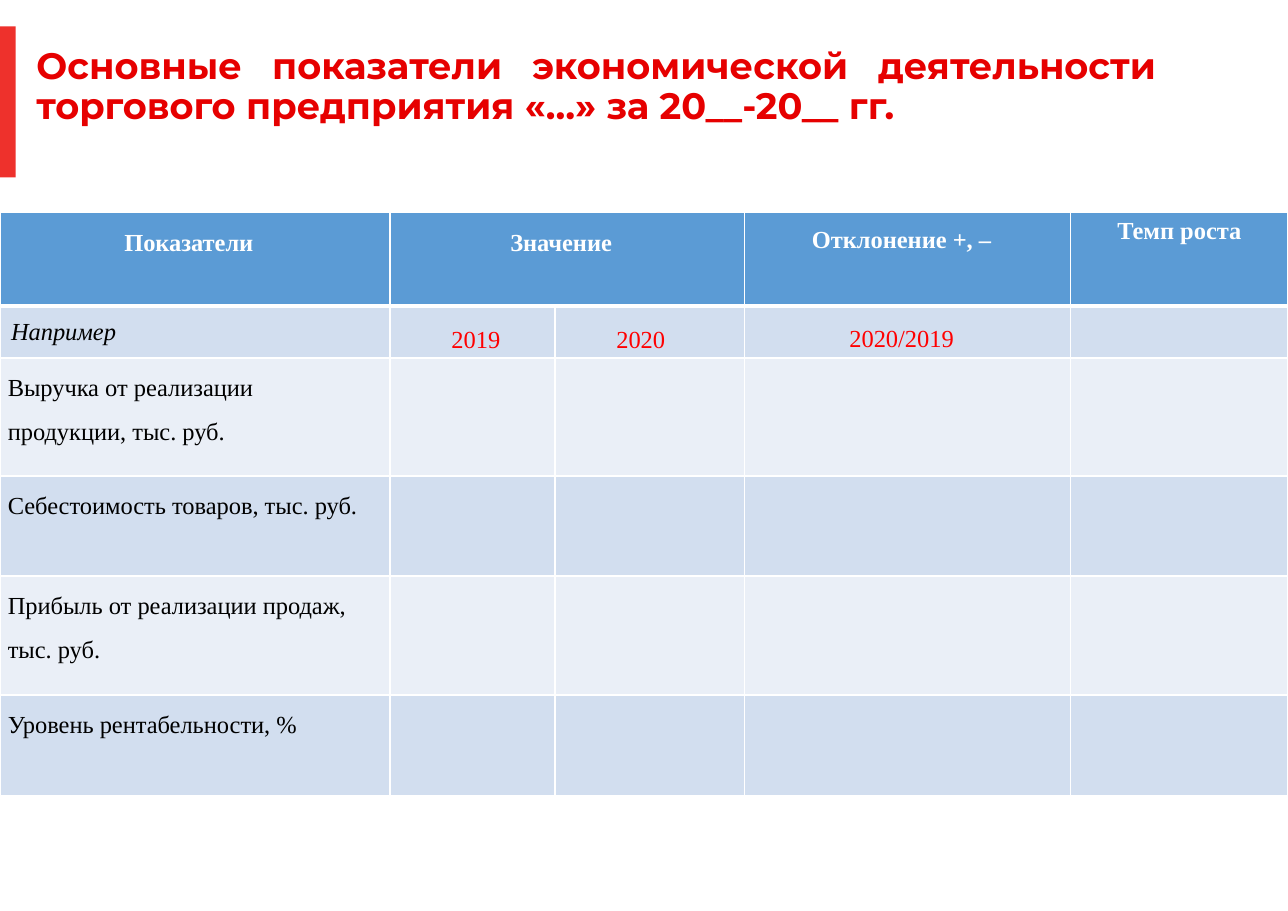
"""Builds a slide with a table of the main economic figures of a trading firm."""
from dataclasses import dataclass

from lxml import etree
from pptx import Presentation
from pptx.dml.color import RGBColor
from pptx.enum.shapes import MSO_SHAPE
from pptx.enum.text import MSO_ANCHOR, PP_ALIGN
from pptx.oxml.ns import qn
from pptx.util import Cm, Pt

RECT = MSO_SHAPE.RECTANGLE
TOP, MIDDLE = MSO_ANCHOR.TOP, MSO_ANCHOR.MIDDLE
LEFT, CENTER, JUSTIFY = PP_ALIGN.LEFT, PP_ALIGN.CENTER, PP_ALIGN.JUSTIFY

TITLE = ("Основные показатели экономической деятельности "
         "торгового предприятия «…» за 20__-20__ гг.")
ROWS = [
    ("Показатели", "Значение", "", "Отклонение +, –", "Темп роста"),
    ("Например", "2019", "2020 ", "2020/2019", ""),
    ("Выручка от реализации продукции, тыс. руб.", "", "", "", ""),
    ("Себестоимость товаров, тыс. руб.", "", "", "", ""),
    ("Прибыль от реализации продаж, тыс. руб.", "", "", "", ""),
    ("Уровень рентабельности, %", "", "", "", ""),
]
PLAIN = ("Темп роста", "Например")
WIDTHS = (8.99, 3.81, 4.37, 7.52, 5.01)
HEIGHTS = (2.16, 1.19, 2.72, 2.31, 2.74, 2.31)


@dataclass(frozen=True)
class Theme:
    """Colours, fonts and type sizes."""
    bar: str = "EE312C"
    title: str = "E60000"
    head: str = "5B9BD5"
    bands: tuple = ("EAEFF7", "D2DEEF")
    white: str = "FFFFFF"
    black: str = "000000"
    red: str = "FF0000"
    title_font: str = "Montserrat"
    font: str = "Times New Roman"
    title_size: int = 24
    size: int = 16


THEME = Theme()


def style(para, font, size, color, bold=False, slant=False):
    """Formats the runs of a paragraph."""
    for run in para.runs:
        face = run.font
        face.name, face.size = font, Pt(size)
        face.bold, face.italic = bold, slant
        face.color.rgb = RGBColor.from_string(color)


def add_title(slide):
    """Places the red bar and the title."""
    bar = slide.shapes.add_shape(RECT, 0, Cm(0.61), Cm(0.36), Cm(3.48))
    bar.shadow.inherit = False
    bar.fill.solid()
    bar.fill.fore_color.rgb = RGBColor.from_string(THEME.bar)
    bar.line.fill.background()
    title = slide.shapes.title
    title.left, title.top = Cm(0.84), Cm(1.09)
    title.width, title.height = Cm(25.81), Cm(1.85)
    frame = title.text_frame
    frame.text = TITLE
    frame.word_wrap = True
    frame.vertical_anchor = MIDDLE
    frame.margin_left = frame.margin_right = 0
    frame.margin_top = frame.margin_bottom = 0
    para = frame.paragraphs[0]
    para.alignment, para.line_spacing = JUSTIFY, 0.9
    style(para, THEME.title_font, THEME.title_size, THEME.title, bold=True)


def paint(cell, row):
    """Draws the white borders and the fill of a cell."""
    props = cell._tc.get_or_add_tcPr()
    widths = {"L": 1, "R": 1, "T": 3 if row == 1 else 1, "B": 3 if row == 0 else 1}
    for side, width in widths.items():
        line = etree.SubElement(props, qn(f"a:ln{side}"), w=str(Pt(width)))
        solid = etree.SubElement(line, qn("a:solidFill"))
        etree.SubElement(solid, qn("a:srgbClr"), val=THEME.white)
    cell.fill.solid()
    color = THEME.bands[row % 2] if row else THEME.head
    cell.fill.fore_color.rgb = RGBColor.from_string(color)


def write(cell, row, col, text):
    """Sets and formats the text of a cell."""
    cell.text = text
    cell.vertical_anchor = MIDDLE if row == 1 else TOP
    para = cell.text_frame.paragraphs[0]
    year = text == "2019"
    if text not in PLAIN:
        cell.margin_left = Cm(1.42 if year else 0.18)
        cell.margin_right = Cm(0.46)
        cell.margin_top = cell.margin_bottom = 0
        para.line_spacing = 1.5 if col == 3 else 1.61
        para.space_after = Pt(0.6)
    para.alignment = CENTER if row == 0 or (col and not year) else LEFT
    color = THEME.red if col else THEME.black
    style(para, THEME.font, THEME.size, color if row else THEME.white,
          bold=row == 0, slant=row == 1 and col == 0)


def add_grid(slide):
    """Builds the table."""
    shape = slide.shapes.add_table(len(ROWS), len(WIDTHS), 0, Cm(4.9),
                                   Cm(sum(WIDTHS)), Cm(sum(HEIGHTS)))
    table = shape.table
    for column, width in zip(table.columns, WIDTHS):
        column.width = Cm(width)
    for line, height in zip(table.rows, HEIGHTS):
        line.height = Cm(height)
    for row, texts in enumerate(ROWS):
        for col, text in enumerate(texts):
            cell = table.cell(row, col)
            paint(cell, row)
            if text:
                write(cell, row, col, text)
    table.cell(0, 1).merge(table.cell(0, 2))


def main():
    """Makes and saves the deck."""
    deck = Presentation()
    deck.slide_width, deck.slide_height = Cm(29.7), Cm(21)
    slide = deck.slides.add_slide(deck.slide_layouts[5])
    add_title(slide)
    add_grid(slide)
    deck.save("out.pptx")


if __name__ == "__main__":
    main()
